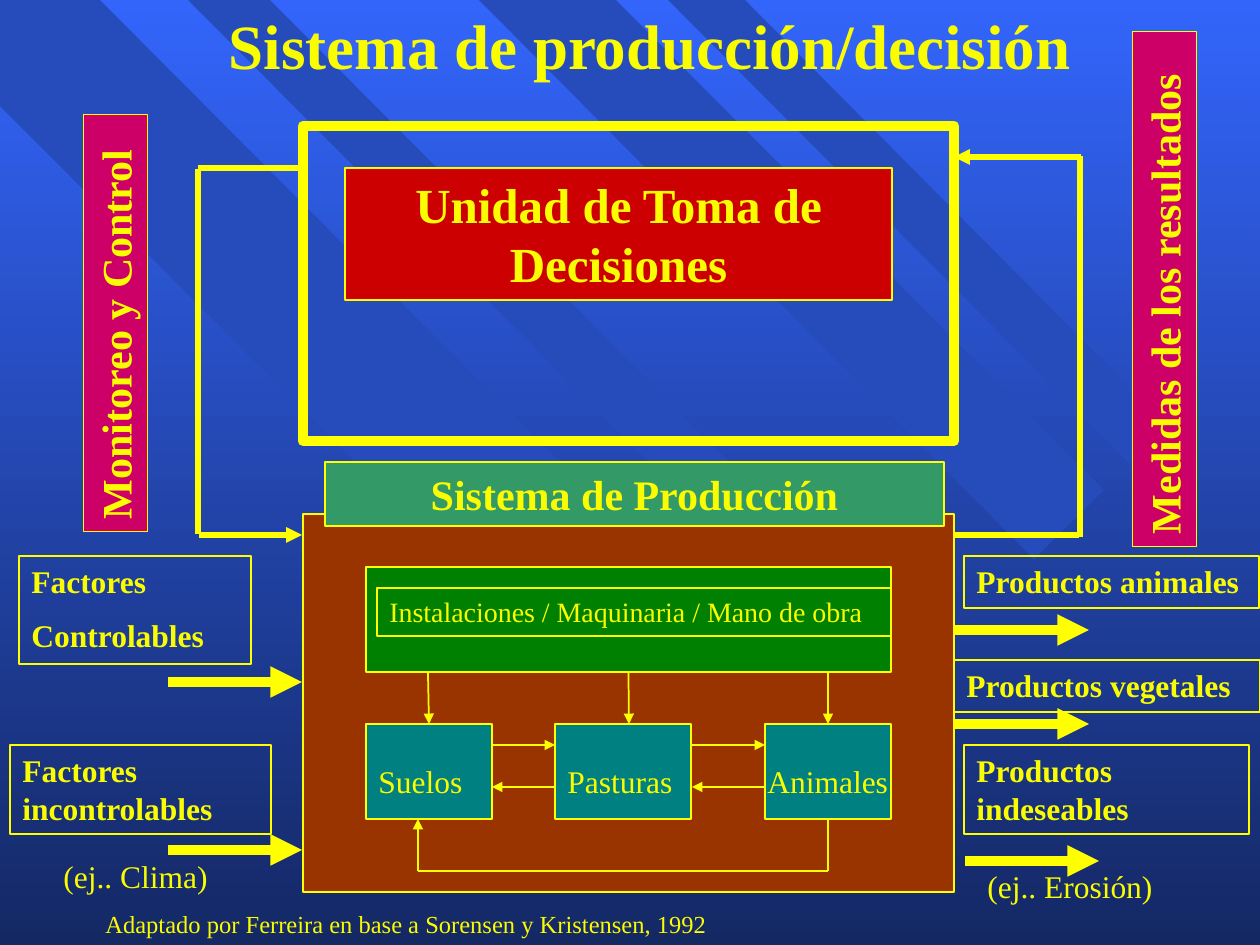
from dataclasses import dataclass

from lxml import etree
from pptx import Presentation
from pptx.dml.color import RGBColor
from pptx.enum.shapes import MSO_CONNECTOR, MSO_SHAPE
from pptx.enum.text import MSO_ANCHOR, MSO_AUTO_SIZE, PP_ALIGN
from pptx.oxml.ns import qn
from pptx.util import Emu, Pt

RECTANGLE = MSO_SHAPE.RECTANGLE
STRAIGHT = MSO_CONNECTOR.STRAIGHT
TOP = MSO_ANCHOR.TOP
NO_FIT = MSO_AUTO_SIZE.NONE
LEFT, CENTER = PP_ALIGN.LEFT, PP_ALIGN.CENTER
TOP_SIDE, BOTTOM_SIDE = 0, 2
PX = 914400 / 126


@dataclass(frozen=True)
class Theme:
    """Colours, font and type sizes in points."""
    font: str = "Times New Roman"
    sky: str = "3365FB"
    night: str = "142864"
    band: str = "264CBC"
    line: str = "FFFF00"
    text: str = "FAFD00"
    magenta: str = "CC0066"
    red: str = "CC0000"
    brown: str = "993300"
    green: str = "008000"
    teal: str = "008080"
    mint: str = "339966"
    title: int = 36
    unit: int = 28
    heading: int = 24
    body: int = 18
    small: int = 16
    source: int = 14
    thin: float = 1
    medium: float = 3
    thick: float = 4.5


def px(length):
    return Emu(round(length * PX))


def color(code):
    return RGBColor.from_string(code)


def write(shape, text, *, size, ink, font, bold=False, align=LEFT):
    frame = shape.text_frame
    frame.word_wrap = True
    frame.auto_size = NO_FIT
    frame.vertical_anchor = TOP
    frame.text = text
    for index, para in enumerate(frame.paragraphs):
        para.alignment = align
        para.space_before = Pt(size / 2 if index else 0)
        for span in para.runs:
            span.font.name = font
            span.font.size = Pt(size)
            span.font.bold = bold
            span.font.color.rgb = color(ink)


class Canvas:
    """Draws styled elements on one slide."""

    def __init__(self, page, theme):
        self.page, self.shapes, self.theme = page, page.shapes, theme

    def background(self):
        fill = self.page.background.fill
        fill.gradient()
        fill.gradient_angle = 270
        for stop, code in zip(fill.gradient_stops, (self.theme.sky, self.theme.night)):
            stop.color.rgb = color(code)
        for stop, position in zip(fill.gradient_stops, (0, 1)):
            stop.position = position

    def band(self, points):
        builder = self.shapes.build_freeform(*points[0], scale=PX)
        builder.add_line_segments(points[1:], close=True)
        shape = builder.convert_to_shape()
        shape.shadow.inherit = False
        shape.fill.solid()
        shape.fill.fore_color.rgb = color(self.theme.band)
        shape.line.fill.background()

    def text(self, shape, text, size, **style):
        write(shape, text, size=size, ink=self.theme.text, font=self.theme.font, **style)

    def title(self, area, text):
        shape = self.shapes.title
        shape.left, shape.top, shape.width, shape.height = map(px, area)
        self.text(shape, text, self.theme.title, bold=True, align=CENTER)
        shape.element.getparent().append(shape.element)

    def label(self, area, text, size):
        self.text(self.shapes.add_textbox(*map(px, area)), text, size)

    def box(self, area, text="", size=None, fill=None, weight=None, turn=0, **style):
        shape = self.shapes.add_shape(RECTANGLE, *map(px, area))
        shape.shadow.inherit = False
        shape.rotation = turn
        if fill:
            shape.fill.solid()
            shape.fill.fore_color.rgb = color(fill)
        else:
            shape.fill.background()
        shape.line.color.rgb = color(self.theme.line)
        shape.line.width = Pt(weight or self.theme.thin)
        if text:
            self.text(shape, text, size or self.theme.body, **style)
        return shape

    def line(self, start, end, weight=None, arrow=True, source=None, target=None):
        connector = self.shapes.add_connector(STRAIGHT, *map(px, start + end))
        connector.line.color.rgb = color(self.theme.line)
        connector.line.width = Pt(weight or self.theme.thin)
        if arrow:
            stroke = connector.line._get_or_add_ln()
            etree.SubElement(stroke, qn("a:tailEnd"), type="triangle")
        etree.SubElement(connector.element.spPr, qn("a:effectLst"))
        if source:
            connector.begin_connect(source, BOTTOM_SIDE)
        if target:
            connector.end_connect(target, TOP_SIDE)


def main():
    theme = Theme()
    deck = Presentation()
    deck.slide_width, deck.slide_height = px(1260), px(945)
    page = deck.slides.add_slide(deck.slide_layouts[5])
    canvas = Canvas(page, theme)

    canvas.background()
    for points in (
        [(844, 747), (100, 0), (0, 0), (0, 106), (742, 850)],
        [(270, 0), (930, 664), (890, 704), (188, 0)],
        [(616, 0), (1104, 490), (1034, 559), (479, 0)],
        [(668, 0), (1130, 464), (1168, 426), (745, 0)],
    ):
        canvas.band(points)

    canvas.box((303, 126, 651, 315), weight=theme.thick * 4 / 3)
    canvas.box((303, 514, 651, 378), fill=theme.brown)
    facilities = canvas.box((366, 567, 525, 105), fill=theme.green)
    soils, pastures, animals = [
        canvas.box((left, 724, width, 95), fill=theme.teal)
        for left, width in ((366, 126), (555, 136), (765, 126))
    ]
    canvas.title((209, 0, 882, 88), "Sistema de producción/decisión")

    for start, end, arrow in (
        ((955, 535), (1079, 535), False),
        ((1080, 537), (1080, 156), False),
        ((1081, 157), (954, 157), True),
        ((303, 168), (198, 168), False),
        ((198, 169), (198, 534), False),
        ((199, 535), (302, 535), True),
    ):
        canvas.line(start, end, theme.medium, arrow)

    for area, text in (
        ((907, 257, 515, 64), "Medidas de los resultados"),
        ((-93, 291, 417, 64), "Monitoreo y Control"),
    ):
        canvas.box(area, text, theme.heading, theme.magenta, turn=270, bold=True)
    canvas.box((325, 462, 619, 64), "Sistema de Producción", theme.heading,
               theme.mint, bold=True, align=CENTER)
    canvas.box((377, 588, 514, 48), "Instalaciones / Maquinaria / Mano de obra", theme.small)
    canvas.box((345, 168, 547, 132), "Unidad de Toma de Decisiones", theme.unit,
               theme.red, bold=True, align=CENTER)

    for area, text in (
        ((19, 556, 232, 108), "Factores\nControlables"),
        ((10, 745, 261, 89), "Factores incontrolables"),
        ((964, 556, 295, 52), "Productos animales"),
        ((954, 660, 306, 52), "Productos vegetales"),
        ((964, 745, 285, 89), "Productos indeseables"),
    ):
        canvas.box(area, text, bold=True)

    for left, level in ((168, 682), (168, 850), (955, 630), (955, 724), (965, 861)):
        canvas.line((left, level), (left + 134, level), theme.thick * 4 / 3)

    canvas.line((428, 673), (429, 724), target=soils)
    canvas.line((629, 672), (629, 724), source=facilities)
    canvas.line((828, 673), (828, 724), target=animals)
    for left, right in ((492, 555), (692, 765)):
        canvas.line((left, 745), (right, 745))
        canvas.line((right, 787), (left, 787))
    canvas.line((828, 819), (828, 871), arrow=False, source=animals)
    canvas.line((828, 871), (418, 871), arrow=False)
    canvas.line((418, 871), (418, 819))

    for area, text in (
        ((366, 756, 146, 50), "Suelos"),
        ((555, 756, 168, 50), "Pasturas"),
        ((755, 756, 209, 50), "Animales"),
        ((51, 851, 231, 50), "(ej.. Clima)"),
        ((975, 861, 241, 50), "(ej.. Erosión)"),
    ):
        canvas.label(area, text, theme.body)
    canvas.label((93, 903, 766, 86), "Adaptado por Ferreira en base a Sorensen y Kristensen, 1992",
                 theme.source)

    deck.save("out.pptx")


if __name__ == "__main__":
    main()
